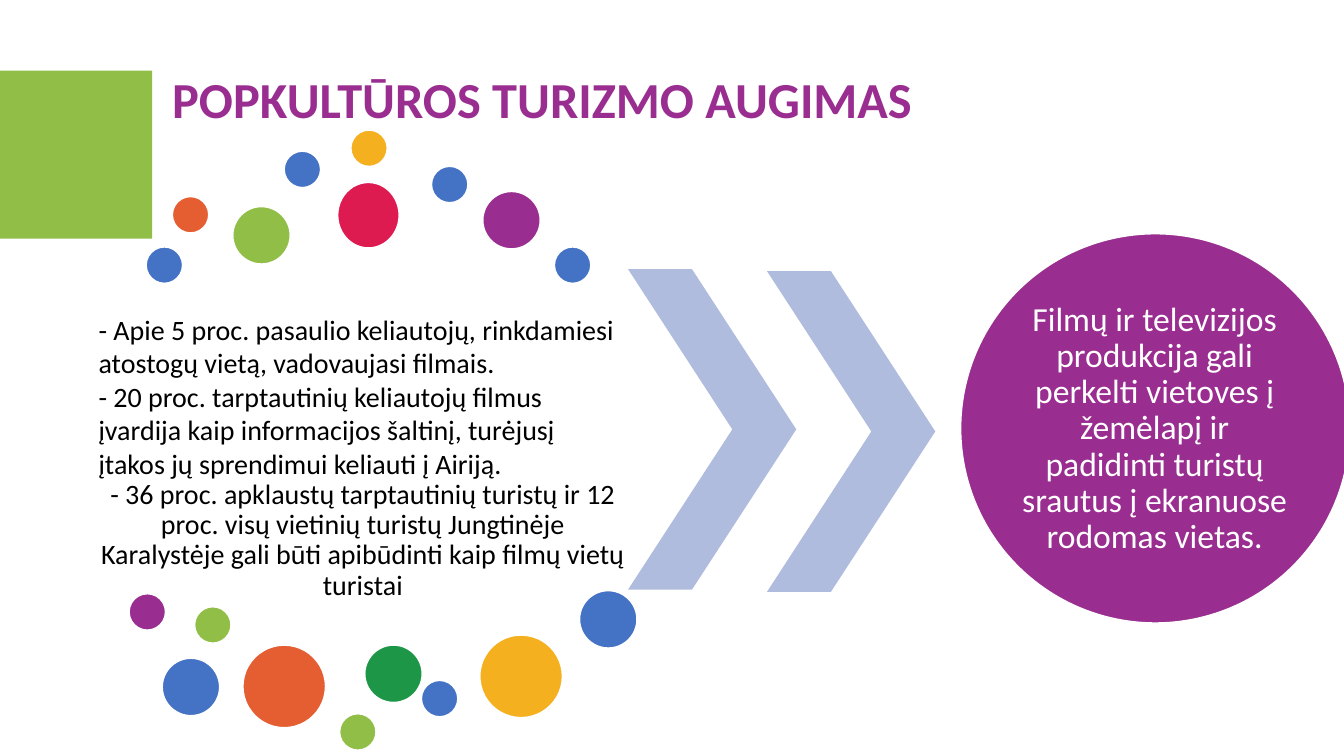
from pptx import Presentation
from pptx.dml.color import RGBColor
from pptx.enum.shapes import MSO_SHAPE
from pptx.enum.text import MSO_ANCHOR, PP_ALIGN
from pptx.util import Pt

RECT, OVAL, CHEVRON = MSO_SHAPE.RECTANGLE, MSO_SHAPE.OVAL, MSO_SHAPE.CHEVRON
TOP, MIDDLE = MSO_ANCHOR.TOP, MSO_ANCHOR.MIDDLE
LEFT, CENTER = PP_ALIGN.LEFT, PP_ALIGN.CENTER

BLUE, ORANGE, GREEN, YELLOW = "4472C4", "E45E32", "91BE46", "F5B020"
PURPLE, RED, DARK_GREEN, LAVENDER = "9A2E90", "DD1B50", "1D9647", "B0BCDE"
WHITE, BLACK = "FFFFFF", "000000"
SMALL, MEDIUM, LARGE = 26, 41, 59

DOTS = [
    (104.4, 176.4, SMALL, BLUE),
    (123.1, 140.4, SMALL, ORANGE),
    (166.3, 147.6, MEDIUM, GREEN),
    (203, 108, SMALL, BLUE),
    (250.6, 92.9, SMALL, YELLOW),
    (308.2, 118.8, SMALL, BLUE),
    (344.9, 136.8, MEDIUM, PURPLE),
    (396, 176.4, SMALL, BLUE),
    (139, 433.4, SMALL, GREEN),
    (92.2, 424.1, SMALL, PURPLE),
    (115.9, 470.2, MEDIUM, BLUE),
    (173.5, 460.8, LARGE, ORANGE),
    (242.6, 509.8, SMALL, GREEN),
    (260.6, 460.8, MEDIUM, DARK_GREEN),
    (301, 486, SMALL, BLUE),
    (342.7, 453.6, LARGE, YELLOW),
    (414, 421.9, MEDIUM, BLUE),
]

FACTS = [
    ("- Apie 5 proc. pasaulio keliautojų, rinkdamiesi atostogų vietą, "
     "vadovaujasi filmais.", LEFT, 1.0),
    ("- 20 proc. tarptautinių keliautojų filmus įvardija kaip informacijos "
     "šaltinį, turėjusį įtakos jų sprendimui keliauti į Airiją.", LEFT, 1.0),
    ("- 36 proc. apklaustų tarptautinių turistų ir 12 proc. visų vietinių "
     "turistų Jungtinėje Karalystėje gali būti apibūdinti kaip filmų vietų "
     "turistai", CENTER, 0.9),
]


def rgb(value):
    """Turn a hex string into a colour."""
    return RGBColor.from_string(value)


def add_figure(slide, kind, x, y, w, h, fill, line=None):
    """Add a filled preset shape, with a thin outline if a colour is given."""
    sp = slide.shapes.add_shape(kind, Pt(x), Pt(y), Pt(w), Pt(h))
    sp.shadow.inherit = False
    sp.fill.solid()
    sp.fill.fore_color.rgb = rgb(fill)
    if line:
        sp.line.color.rgb = rgb(line)
        sp.line.width = Pt(1)
    else:
        sp.line.fill.background()
    return sp


def add_box(slide, x, y, w, h, anchor=MIDDLE, inset=(0, 0)):
    """Add an empty wrapping text box and return its text frame."""
    tf = slide.shapes.add_textbox(Pt(x), Pt(y), Pt(w), Pt(h)).text_frame
    tf.word_wrap = True
    tf.vertical_anchor = anchor
    tf.margin_left = tf.margin_right = Pt(inset[0])
    tf.margin_top = tf.margin_bottom = Pt(inset[1])
    return tf


def write(tf, text, size, color, bold=False, align=LEFT, spacing=0.9):
    """Write one paragraph, using the empty first one if there is one."""
    p = tf.paragraphs[0] if not tf.text else tf.add_paragraph()
    p.alignment = align
    p.line_spacing = spacing
    r = p.add_run()
    r.text = text
    r.font.name = "Calibri"
    r.font.size = Pt(size)
    r.font.bold = bold
    r.font.color.rgb = rgb(color)


def main():
    """Build the slide and save it."""
    prs = Presentation()
    prs.slide_width, prs.slide_height = Pt(960), Pt(540)
    slide = prs.slides.add_slide(prs.slide_layouts[6])

    add_figure(slide, RECT, -3.6, 50.4, 112.3, 120.2, GREEN)

    tf = add_box(slide, 68.4, 270, 381.6, 112.3, inset=(2, 2))
    for text, align, spacing in FACTS:
        write(tf, text, 20, BLACK, align=align, spacing=spacing)

    for x, y, size, color in DOTS:
        add_figure(slide, OVAL, x, y, size, size, color, WHITE)
    add_figure(slide, OVAL, 241.2, 130.3, 43.9, 46.8, RED, WHITE)

    for x, y in ((448.6, 192.2), (547.9, 193.7)):
        chevron = add_figure(slide, CHEVRON, x, y, 120.2, 229, LAVENDER)
        chevron.adjustments[0] = 0.62

    add_figure(slide, OVAL, 686.2, 167, 278, 278, PURPLE, WHITE)
    tf = add_box(slide, 726.5, 208.1, 196.6, 196.6)
    write(tf, "Filmų ir televizijos produkcija gali perkelti vietoves į "
          "žemėlapį ir padidinti turistų srautus į ekranuose rodomas vietas.",
          24, WHITE, align=CENTER)

    tf = add_box(slide, 115.9, 49.7, 759.6, 54.7, TOP, (7.2, 3.6))
    write(tf, "POPKULTŪROS TURIZMO AUGIMAS", 36, PURPLE, bold=True)

    prs.save("out.pptx")


if __name__ == "__main__":
    main()
